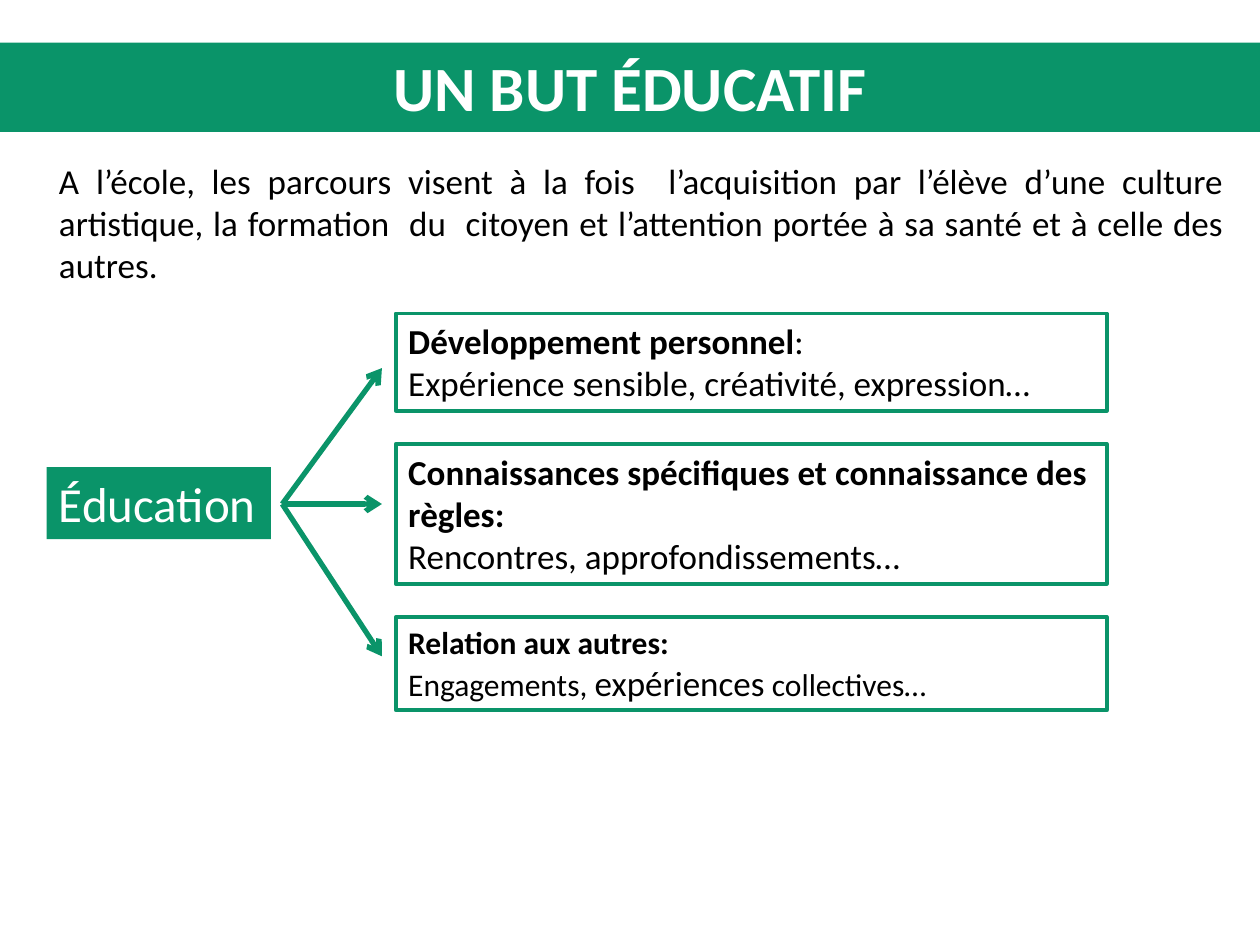
from dataclasses import dataclass

from lxml.etree import SubElement
from pptx import Presentation
from pptx.dml.color import RGBColor
from pptx.enum.shapes import MSO_CONNECTOR
from pptx.enum.text import MSO_AUTO_SIZE, PP_ALIGN
from pptx.oxml.ns import qn
from pptx.util import Cm, Pt


@dataclass(frozen=True)
class Theme:
    """Colours, font and sizes used on the slide."""
    green: RGBColor = RGBColor(0x0A, 0x94, 0x69)
    white: RGBColor = RGBColor(0xFF, 0xFF, 0xFF)
    black: RGBColor = RGBColor(0, 0, 0)
    font: str = "Calibri"
    title: int = 36
    topic: int = 28
    body: int = 20
    small: int = 18
    border: float = 2.25
    arrow: float = 3


@dataclass(frozen=True)
class Box:
    """A region in centimetres."""
    left: float
    top: float
    width: float
    height: float


THEME = Theme()
INTRO = (
    "A l’école, les parcours visent à la fois  l’acquisition par l’élève d’une culture "
    "artistique, la formation  du  citoyen et l’attention portée à sa santé et à celle des autres."
)
GOALS = [
    (1.96, [[("Développement personnel", THEME.body, True), (":", THEME.body, False)],
            [("Expérience sensible, créativité, expression…", THEME.body, False)]]),
    (2.82, [[("Connaissances spécifiques et connaissance des règles:", THEME.body, True)],
            [("Rencontres, approfondissements…", THEME.body, False)]]),
    (1.88, [[("Relation aux autres:", THEME.small, True)],
            [("Engagements, ", THEME.small, False), ("expériences", THEME.body, False),
             (" collectives…", THEME.small, False)]]),
]


def add_text(slide, box, lines, color=THEME.black, align=PP_ALIGN.LEFT, wrap=True):
    """Place lines of (text, size, bold) runs in a box and return its shape."""
    panel = slide.shapes.add_textbox(Cm(box.left), Cm(box.top), Cm(box.width), Cm(box.height))
    frame = panel.text_frame
    frame.word_wrap = wrap
    frame.auto_size = MSO_AUTO_SIZE.SHAPE_TO_FIT_TEXT
    paragraph = frame.paragraphs[0]
    paragraph.alignment = align
    for index, line in enumerate(lines):
        if index:
            paragraph.add_line_break()
        for text, size, bold in line:
            run = paragraph.add_run()
            run.text = text
            run.font.name = THEME.font
            run.font.size = Pt(size)
            run.font.bold = bold
            run.font.color.rgb = color
    return panel


def add_band(slide, box, text, size, bold=False, align=PP_ALIGN.LEFT, wrap=True):
    """Place white text on a green band."""
    band = add_text(slide, box, [[(text, size, bold)]], THEME.white, align, wrap)
    band.fill.solid()
    band.fill.fore_color.rgb = THEME.green


def add_goals(slide, box, gap):
    """Stack the outlined goals from the top of the box."""
    top = box.top
    for height, lines in GOALS:
        goal = add_text(slide, Box(box.left, top, box.width, height), lines)
        goal.line.color.rgb = THEME.green
        goal.line.width = Pt(THEME.border)
        top += height + gap


def add_arrows(slide, box, start, ends):
    """Fan arrows across the box from one height to several others."""
    for end in ends:
        arrow = slide.shapes.add_connector(
            MSO_CONNECTOR.STRAIGHT, Cm(box.left), Cm(box.top + start),
            Cm(box.left + box.width), Cm(box.top + end))
        arrow.line.color.rgb = THEME.green
        arrow.line.width = Pt(THEME.arrow)
        SubElement(arrow.line._get_or_add_ln(), qn("a:tailEnd"), type="arrow")
        SubElement(arrow._element.spPr, qn("a:effectLst"))


def add_diagram(slide, box):
    """Link the topic to its goals within the box."""
    add_band(slide, Box(box.left, box.top + 3.1, 4.52, 1.45),
             "Éducation", THEME.topic, wrap=False)
    add_goals(slide, Box(box.left + 7.04, box.top, box.width - 7.04, box.height), 0.67)
    add_arrows(slide, Box(box.left + 4.75, box.top, 2.01, box.height),
               3.84, (1.1, 3.84, 6.91))


def main():
    """Build and save the slide."""
    deck = Presentation()
    deck.slide_width, deck.slide_height = Cm(25.4), Cm(19.05)
    slide = deck.slides.add_slide(deck.slide_layouts[6])
    add_text(slide, Box(0.94, 3.1, 23.98, 2.82), [[(INTRO, THEME.body, False)]],
             align=PP_ALIGN.JUSTIFY)
    add_band(slide, Box(0, 0.86, 25.4, 1.8), "UN BUT ÉDUCATIF", THEME.title,
             bold=True, align=PP_ALIGN.CENTER)
    add_diagram(slide, Box(0.94, 6.32, 21.37, 8))
    deck.save("out.pptx")


if __name__ == "__main__":
    main()
